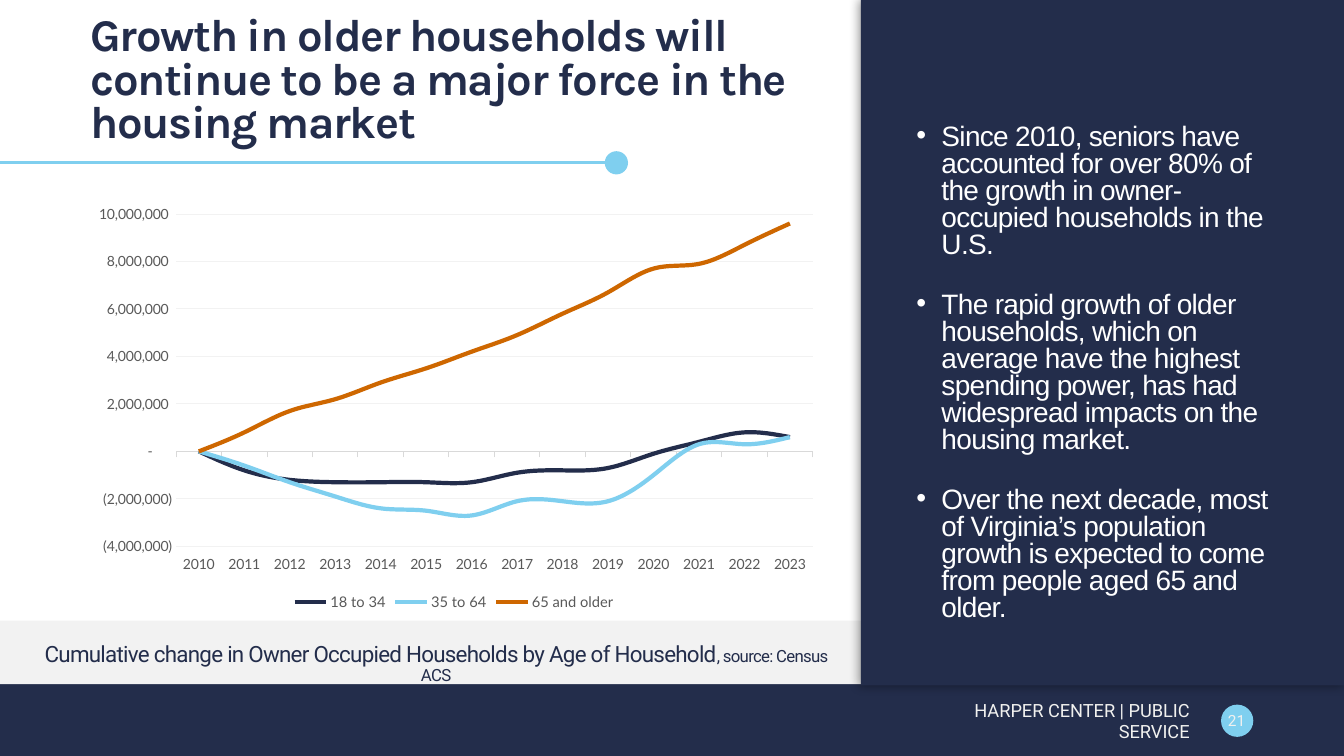
from lxml import etree
from pptx import Presentation
from pptx.chart.data import CategoryChartData
from pptx.dml.color import RGBColor
from pptx.enum.chart import XL_CHART_TYPE, XL_LEGEND_POSITION, XL_TICK_LABEL_POSITION, XL_TICK_MARK
from pptx.enum.shapes import MSO_CONNECTOR, MSO_SHAPE
from pptx.enum.text import MSO_ANCHOR, PP_ALIGN
from pptx.oxml.ns import qn
from pptx.util import Inches, Pt

RECTANGLE, OVAL = MSO_SHAPE.RECTANGLE, MSO_SHAPE.OVAL
STRAIGHT = MSO_CONNECTOR.STRAIGHT
LEFT, CENTER, RIGHT = PP_ALIGN.LEFT, PP_ALIGN.CENTER, PP_ALIGN.RIGHT
TOP, MIDDLE, BOTTOM = MSO_ANCHOR.TOP, MSO_ANCHOR.MIDDLE, MSO_ANCHOR.BOTTOM
LINE_CHART = XL_CHART_TYPE.LINE
LEGEND_BOTTOM = XL_LEGEND_POSITION.BOTTOM
LABELS_LOW = XL_TICK_LABEL_POSITION.LOW
TICK_NONE, TICK_OUTSIDE = XL_TICK_MARK.NONE, XL_TICK_MARK.OUTSIDE

COLORS = {
    "navy": "232D4B", "sky": "7FCFEF", "orange": "CE6700", "white": "FFFFFF",
    "pale": "F2F2F2", "cream": "F1F1EF", "gray": "595959", "axis": "D9D9D9", "black": "000000",
}
NUMBER_FORMAT = '_(* #,##0_);_(* \\(#,##0\\);_(* "-"??_);_('
YEARS = [str(year) for year in range(2010, 2024)]
UNIT = 100_000
# Cumulative change in households, in units of 100,000
HOUSEHOLDS = {
    "18 to 34": ("navy", [0, -8, -12, -13, -13, -13, -13, -9, -8, -7, -1, 4, 8, 6]),
    "35 to 64": ("sky", [0, -6, -13, -19, -24, -25, -27, -21, -21, -21, -10, 3, 3, 6]),
    "65 and older": ("orange", [0, 8, 17, 22, 29, 35, 42, 49, 58, 67, 77, 79, 87, 96]),
}
FINDINGS = [
    "Since 2010, seniors have accounted for over 80% of the growth in owner-occupied "
    "households in the U.S.",
    "The rapid growth of older households, which on average have the highest spending power, "
    "has had widespread impacts on the housing market.",
    "Over the next decade, most of Virginia’s population growth is expected to come from "
    "people aged 65 and older.",
]


def color(name):
    return RGBColor.from_string(COLORS[name])


def set_font(font, size, name, family):
    font.size, font.name = Pt(size), family
    font.color.rgb = color(name)


def set_line(line, name, width):
    line.color.rgb = color(name)
    line.width = Pt(width)


def add_bullet(para, indent):
    properties = para._p.get_or_add_pPr()
    properties.set("marL", str(Inches(indent)))
    properties.set("indent", str(-Inches(indent)))
    etree.SubElement(properties, qn("a:buFont"), typeface="Arial")
    etree.SubElement(properties, qn("a:buChar"), char="•")


class SlideBuilder:
    """Places elements on one slide; all lengths are percentages of its width and height."""

    def __init__(self, deck):
        self.deck = deck
        self.page = deck.slides.add_slide(deck.slide_layouts[6])

    def place(self, x, y, width, height):
        across, down = self.deck.slide_width / 100, self.deck.slide_height / 100
        return [round(v) for v in (x * across, y * down, width * across, height * down)]

    def shape(self, kind, area, fill, shadow=False):
        shape = self.page.shapes.add_shape(kind, *self.place(*area))
        shape.fill.solid()
        shape.fill.fore_color.rgb = color(fill)
        shape.line.fill.background()
        shape.shadow.inherit = False
        if shadow:
            effects = shape._element.spPr.find(qn("a:effectLst"))
            outer = etree.SubElement(effects, qn("a:outerShdw"), blurRad=str(Pt(7)),
                                     dist=str(Pt(1)), dir=str(180 * 60000), rotWithShape="0")
            tint = etree.SubElement(outer, qn("a:srgbClr"), val=COLORS["black"])
            etree.SubElement(tint, qn("a:alpha"), val="40000")

    def rule(self, x1, x2, y, name, width):
        left, top, length, _ = self.place(x1, y, x2 - x1, 0)
        line = self.page.shapes.add_connector(STRAIGHT, left, top, left + length, top)
        set_line(line.line, name, width)
        etree.SubElement(line._element.spPr, qn("a:effectLst"))

    def text(self, paragraphs, area, size, name, family="Roboto", bold=False, align=LEFT,
             anchor=TOP, bottom=0.05, leading=None, before=None, after=None, tracking=0,
             bullet=None):
        """Each paragraph is a list of (words, size) spans or a plain string."""
        box = self.page.shapes.add_textbox(*self.place(*area))
        frame = box.text_frame
        frame.word_wrap = True
        frame.vertical_anchor = anchor
        frame.margin_bottom = Inches(bottom)
        for index, spans in enumerate(paragraphs):
            para = frame.add_paragraph() if index else frame.paragraphs[0]
            para.alignment = align
            if leading:
                para.line_spacing = leading
            if before:
                para.space_before = Pt(before)
            if after:
                para.space_after = Pt(after)
            if bullet:
                add_bullet(para, bullet)
            for words, span_size in [(spans, size)] if isinstance(spans, str) else spans:
                span = para.add_run()
                span.text = words
                set_font(span.font, span_size, name, family)
                span.font.bold = bold
                if tracking:
                    span._r.get_or_add_rPr().set("spc", str(round(tracking * 100)))

    def line_chart(self, area, categories, series, family="Lato"):
        data = CategoryChartData(number_format=NUMBER_FORMAT)
        data.categories = categories
        for label, (_, values) in series.items():
            data.add_series(label, [value * UNIT for value in values])
        chart = self.page.shapes.add_chart(LINE_CHART, *self.place(*area), data).chart
        set_font(chart.font, 10, "black", family)
        chart.has_title = False
        chart.has_legend = True
        chart.legend.position = LEGEND_BOTTOM
        chart.legend.include_in_layout = False
        set_font(chart.legend.font, 10.5, "gray", family)

        years, counts = chart.category_axis, chart.value_axis
        for axis in (years, counts):
            set_font(axis.tick_labels.font, 10, "gray", family)
            axis.minor_tick_mark = TICK_NONE
        years.tick_label_position = LABELS_LOW
        years.major_tick_mark = TICK_OUTSIDE
        set_line(years.format.line, "axis", 0.75)
        counts.major_tick_mark = TICK_NONE
        counts.minimum_scale, counts.maximum_scale = -40 * UNIT, 100 * UNIT
        counts.major_unit = 20 * UNIT
        counts.format.line.fill.background()
        set_line(counts.major_gridlines.format.line, "pale", 0.75)
        counts.tick_labels.number_format = NUMBER_FORMAT
        counts.tick_labels.number_format_is_linked = False

        chart.plots[0].vary_by_categories = False
        for plotted, (name, _) in zip(chart.plots[0].series, series.values()):
            plotted.smooth = True
            set_line(plotted.format.line, name, 3)


def main():
    deck = Presentation()
    deck.slide_width, deck.slide_height = Inches(13.33), Inches(7.5)
    slide = SlideBuilder(deck)

    slide.shape(RECTANGLE, (0, 90.5, 100, 9.5), "navy")
    slide.shape(OVAL, (45, 20, 1.73, 3.07), "sky")
    slide.rule(0, 45, 21.5, "sky", 2.25)
    slide.shape(OVAL, (90.85, 93.2, 2.4, 4.27), "sky")
    slide.shape(RECTANGLE, (0, 82.1, 72.4, 8.4), "pale")
    slide.shape(RECTANGLE, (64.05, 0, 35.95, 90.67), "navy", shadow=True)

    slide.text(["Growth in older households will continue to be a major force in the housing market"],
               (6, 6, 55.58, 13.5), 32.4, "navy", family="Karla", bold=True,
               anchor=BOTTOM, bottom=0, leading=0.8, tracking=-1)
    slide.line_chart((6, 26.1, 55.58, 55.2), YEARS, HOUSEHOLDS)
    slide.text(FINDINGS, (67.44, 15.87, 28.66, 70.8), 20, "white", family="Arial",
               leading=0.8, after=24, tracking=-0.5, bullet=0.25)
    slide.text([[("Cumulative change in Owner Occupied Households by Age of Household", 16),
                 (", source: Census ACS", 12)]],
               (2.55, 84.4, 59.8, 3.87), 16, "navy", align=CENTER,
               leading=0.9, before=10, tracking=-0.5)
    slide.text(["HARPER CENTER | PUBLIC SERVICE"], (69, 92.67, 20.25, 5.33), 13, "cream",
               align=RIGHT, anchor=MIDDLE)
    slide.text(["21"], (90.32, 92.93, 3.38, 4.67), 11, "cream", align=CENTER, anchor=MIDDLE)

    deck.save("out.pptx")


if __name__ == "__main__":
    main()
